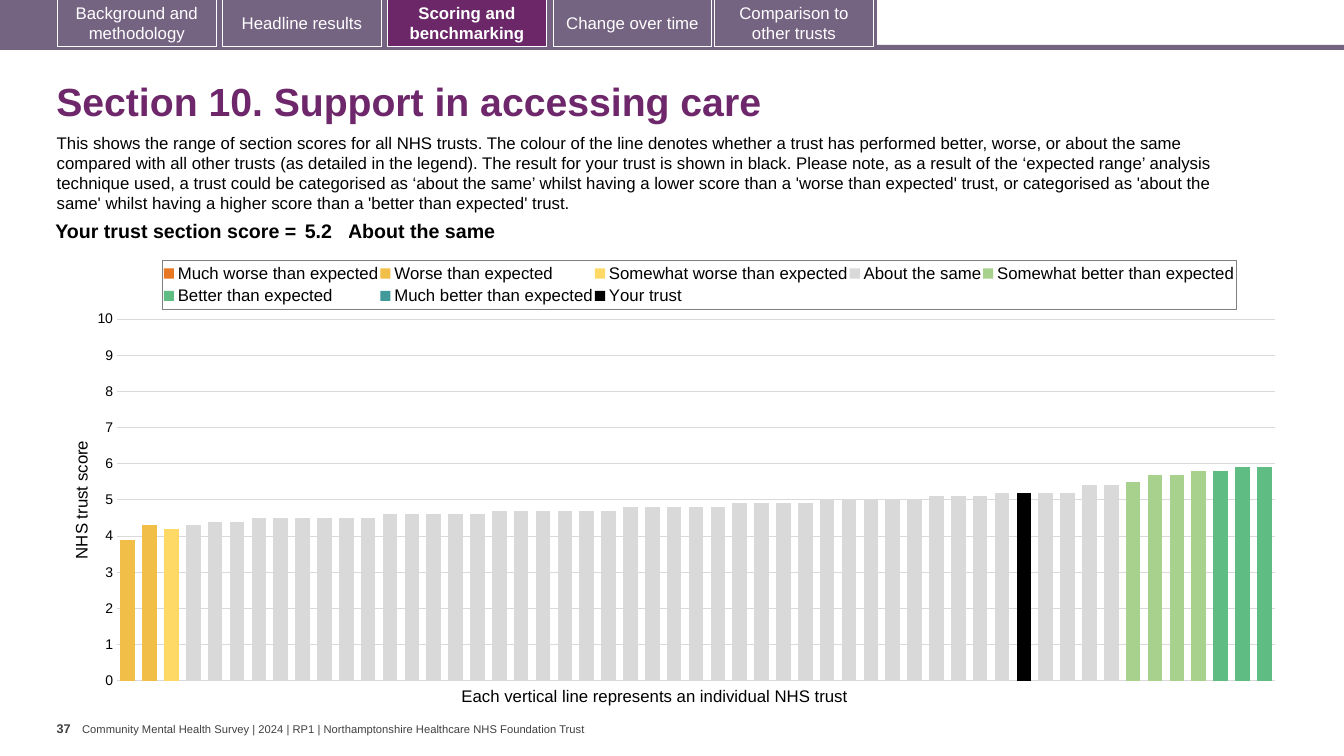
"""Build the slide on section scores for support in accessing care."""
from copy import deepcopy
from lxml.etree import fromstring
from pptx import Presentation
from pptx.chart.data import CategoryChartData as ChartData
from pptx.dml.color import RGBColor as RGB
from pptx.enum.chart import XL_CHART_TYPE as Kind, XL_LEGEND_POSITION as Spot
from pptx.enum.chart import XL_TICK_MARK as Tick
from pptx.enum.shapes import MSO_SHAPE as Shape
from pptx.enum.text import MSO_ANCHOR as Anchor, PP_ALIGN as Align
from pptx.oxml.ns import nsdecls
from pptx.util import Cm, Pt

BLACK = RGB(0x00, 0x00, 0x00)
WHITE = RGB(0xFF, 0xFF, 0xFF)
GREY = RGB(0x40, 0x40, 0x40)
GRID = RGB(0xD9, 0xD9, 0xD9)
MAUVE = RGB(0x75, 0x63, 0x82)
PLUM = RGB(0x6B, 0x27, 0x68)
TITLE = RGB(0x6D, 0x27, 0x6A)

deck = Presentation()
deck.slide_width, deck.slide_height = Cm(33.87), Cm(19.05)
slide = deck.slides.add_slide(deck.slide_layouts[6])
shapes = slide.shapes


def style(font, size, color=BLACK, bold=False):
    font.name, font.size, font.bold = "Arial", Pt(size), bold
    font.color.rgb = color


def label(text, left, top, width, height, size, color=BLACK, bold=False,
          wrap=True, anchor=Anchor.TOP, inset=(0.25, 0.13)):
    frame = shapes.add_textbox(Cm(left), Cm(top), Cm(width), Cm(height)).text_frame
    frame.word_wrap, frame.vertical_anchor = wrap, anchor
    frame.margin_left = frame.margin_right = Cm(inset[0])
    frame.margin_top = frame.margin_bottom = Cm(inset[1])
    para = frame.paragraphs[0]
    para.text = text
    style(para.font, size, color, bold)
    return para


bars = [(0, 1.13, 33.87, 0.13), (0, 0, 22.1, 1.19)]
for left, top, width, height in bars:
    bar = shapes.add_shape(Shape.RECTANGLE, Cm(left), Cm(top), Cm(width), Cm(height))
    bar.shadow.inherit = False
    bar.fill.solid()
    bar.fill.fore_color.rgb = MAUVE
    bar.line.fill.background()

tabs = [("Background and methodology", 1.45), ("Headline results", 5.61),
        ("Scoring and benchmarking", 9.77), ("Change over time", 13.94),
        ("Comparison to other trusts", 18.01)]
for name, left in tabs:
    live = name.startswith("Scoring")
    tab = shapes.add_shape(Shape.RECTANGLE, Cm(left), Cm(-0.03), Cm(4), Cm(1.2))
    tab.shadow.inherit = False
    tab.fill.solid()
    tab.fill.fore_color.rgb = PLUM if live else MAUVE
    tab.line.color.rgb = WHITE
    tab.line.width = Pt(0.75)
    tab.text_frame.word_wrap = True
    tab.text_frame.vertical_anchor = Anchor.MIDDLE
    para = tab.text_frame.paragraphs[0]
    para.text = name
    para.alignment = Align.CENTER
    style(para.font, 12, WHITE, live)

head = label("Section 10. Support in accessing care", 1.17, 1.7, 31.72, 1.83,
             28, TITLE, True, anchor=Anchor.MIDDLE)
head.line_spacing = 0.9
label("This shows the range of section scores for all NHS trusts. The colour of "
      "the line denotes whether a trust has performed better, worse, or about the "
      "same compared with all other trusts (as detailed in the legend). The result "
      "for your trust is shown in black. Please note, as a result of the ‘expected "
      "range’ analysis technique used, a trust could be categorised as ‘about the "
      "same’ whilst having a lower score than a 'worse than expected' trust, or "
      "categorised as 'about the same' whilst having a higher score than a 'better "
      "than expected' trust.", 1.18, 3.21, 30.81, 2.31, 12)
label("37", 1.43, 18.04, 0.64, 1.02, 9, GREY, True, wrap=False, inset=(0, 0.13))
label("Community Mental Health Survey | 2024 | RP1 | Northamptonshire Healthcare "
      "NHS Foundation Trust", 2.07, 18.2, 12.83, 0.33, 8, GREY, wrap=False,
      anchor=Anchor.MIDDLE, inset=(0, 0))
label("Each vertical line represents an individual NHS trust",
      11.38, 17.15, 10.44, 0.76, 12, wrap=False)

same = [4.3, 4.4, 4.4, *[4.5] * 6, *[4.6] * 5, *[4.7] * 6, *[4.8] * 5,
        *[4.9] * 4, *[5] * 5, *[5.1] * 3, *[5.2] * 4, 5.4, 5.4]
groups = [
    ("Much worse than expected", RGB(0xE8, 0x77, 0x22), 1, []),
    ("Worse than expected", RGB(0xF1, 0xBE, 0x48), 1, [3.9, 4.3]),
    ("Somewhat worse than expected", RGB(0xFF, 0xD9, 0x66), 3, [4.2]),
    ("About the same", GRID, 4, same),
    ("Somewhat better than expected", RGB(0xA9, 0xD1, 0x8E), 47, [5.5, 5.7, 5.7, 5.8]),
    ("Better than expected", RGB(0x5F, 0xBD, 0x83), 51, [5.8, 5.9, 5.9]),
    ("Much better than expected", RGB(0x41, 0x99, 0x99), 1, []),
    ("Your trust", BLACK, 42, [5.2]),
]
count = 53
data = ChartData()
data.categories = [str(n) for n in range(1, count + 1)]
for name, color, first, vals in groups:
    before = [None] * (first - 1)
    after = [None] * (count - len(before) - len(vals))
    data.add_series(name, before + vals + after)
chart = shapes.add_chart(Kind.COLUMN_CLUSTERED, Cm(1.71), Cm(6.26), Cm(30.86),
                         Cm(11.28), data).chart
chart.has_title = False
style(chart.font, 10)
plot = chart.plots[0]
plot.gap_width, plot.overlap, plot.vary_by_categories = 50, 100, False
for series, group in zip(plot.series, groups):
    series.format.fill.solid()
    series.format.fill.fore_color.rgb = group[1]
    series.invert_if_negative = False

chart.category_axis.visible = False
axis = chart.value_axis
axis.minimum_scale, axis.maximum_scale, axis.major_unit = 0, 10, 1
axis.major_tick_mark = axis.minor_tick_mark = Tick.NONE
axis.format.line.fill.background()
axis.major_gridlines.format.line.color.rgb = GRID
axis.major_gridlines.format.line.width = Pt(0.75)
axis.tick_labels.number_format = "0"
axis.tick_labels.number_format_is_linked = False
style(axis.tick_labels.font, 10)
para = axis.axis_title.text_frame.paragraphs[0]
para.text = "NHS trust score"
style(para.font, 12)

chart.has_legend = True
legend = chart.legend
legend.position = Spot.TOP
legend.include_in_layout = False
style(legend.font, 12)

area, key = chart._chartSpace.chart.plotArea, legend._element
target = '<c:layoutTarget val="inner"/>'
for part, inner, x, y, w, h in [(area, target, 0.04, 0.158, 0.946, 0.808),
                                (key, "", 0.077, 0.026, 0.877, 0.11)]:
    for old in part.findall("{*}layout"):
        part.remove(old)
    part.insert(0 if part is area else 1, fromstring(
        f'<c:layout {nsdecls("c")}><c:manualLayout>{inner}'
        '<c:xMode val="edge"/><c:yMode val="edge"/>'
        f'<c:x val="{x}"/><c:y val="{y}"/><c:w val="{w}"/><c:h val="{h}"/>'
        '</c:manualLayout></c:layout>'))
key.find("{*}txPr").addprevious(fromstring(
    f'<c:spPr {nsdecls("c", "a")}><a:ln w="9525"><a:solidFill>'
    '<a:srgbClr val="7F7F7F"/></a:solidFill></a:ln></c:spPr>'))

main = area.find("{*}barChart")
side = deepcopy(main)
main.remove(main.findall("{*}ser")[-1])
for ser in side.findall("{*}ser")[:-1]:
    side.remove(ser)
main.addnext(side)
cat, val = deepcopy(area.find("{*}catAx")), deepcopy(area.find("{*}valAx"))
for node, number in zip(side.findall("{*}axId"), ("101", "102")):
    node.set("val", number)
for part, own, other in [(cat, "101", "102"), (val, "102", "101")]:
    part.find("{*}axId").set("val", own)
    part.find("{*}crossAx").set("val", other)
for tag in ("majorGridlines", "title"):
    val.remove(val.find("{*}" + tag))
for tag, value in [("axPos", "r"), ("tickLblPos", "none"), ("crosses", "max")]:
    val.find("{*}" + tag).set("val", value)
area.find("{*}valAx").addnext(val)
val.addnext(cat)

table = shapes.add_table(1, 3, Cm(0.9), Cm(5.46), Cm(29.69), Cm(0.56)).table
table.first_row = table.horz_banding = False
cells = [("Your trust section score =", 6.68, 0.1, Align.RIGHT),
         ("5.2", 1.19, 0.1, Align.LEFT), ("About the same", 21.82, 0, Align.LEFT)]
for col, (text, width, edge, align) in enumerate(cells):
    table.columns[col].width = Cm(width)
    cell = table.cell(0, col)
    cell.fill.background()
    cell.margin_left = cell.margin_right = Cm(edge)
    cell.margin_top = cell.margin_bottom = Cm(0.1)
    para = cell.text_frame.paragraphs[0]
    para.text = text
    para.alignment = align
    style(para.font, 14, bold=True)

deck.save("out.pptx")
